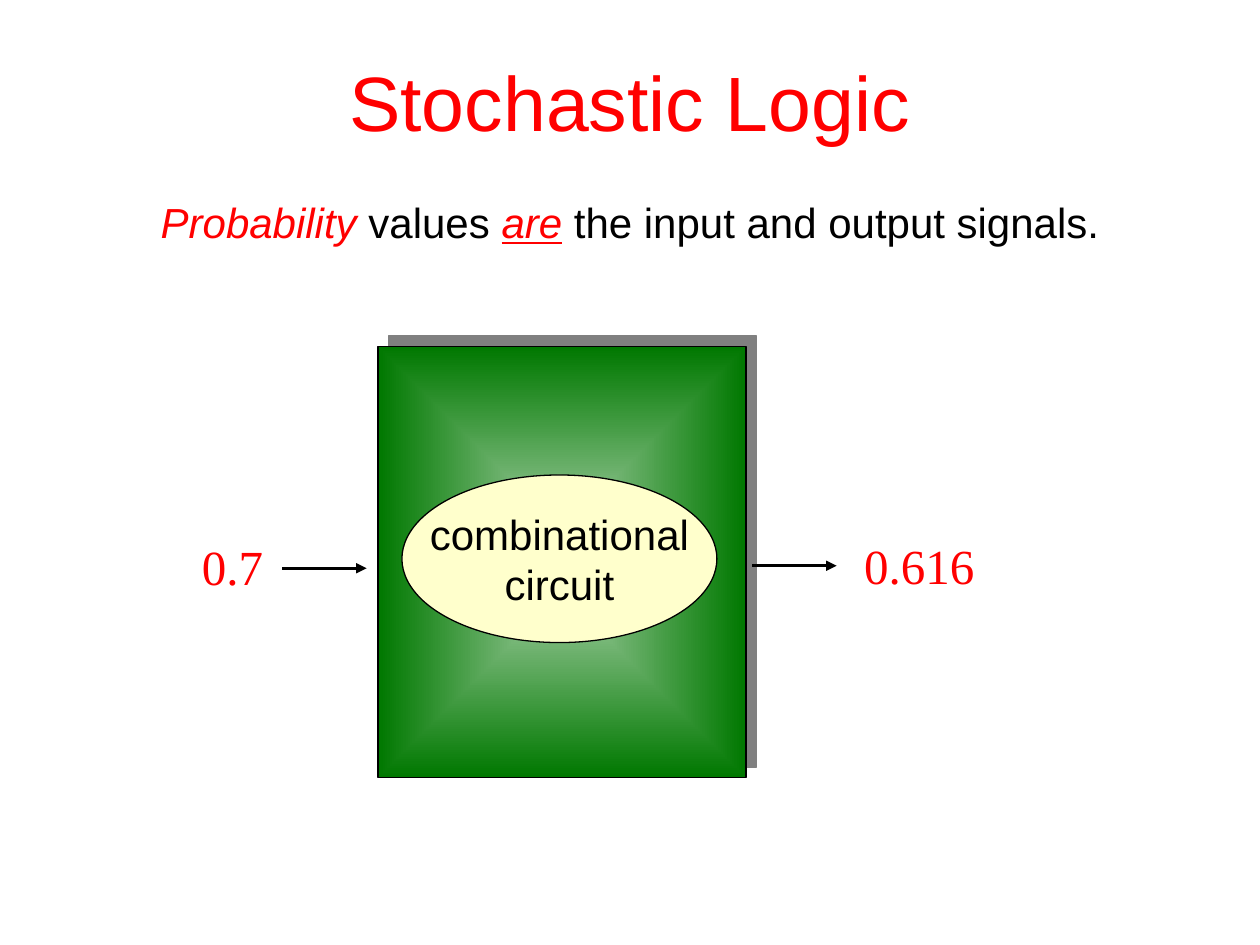
from lxml.etree import SubElement
from pptx import Presentation
from pptx.dml.color import RGBColor
from pptx.enum.shapes import MSO_CONNECTOR, MSO_SHAPE
from pptx.enum.text import MSO_ANCHOR, PP_ALIGN
from pptx.oxml import parse_xml
from pptx.oxml.ns import nsdecls, qn
from pptx.util import Inches, Pt

RED = RGBColor(0xFF, 0x00, 0x00)
BLACK = RGBColor(0x00, 0x00, 0x00)
CREAM = RGBColor(0xFF, 0xFF, 0xCC)
LIGHT_GREEN = RGBColor(0x9F, 0xCC, 0x9F)
GREEN = RGBColor(0x00, 0x78, 0x00)
GRAY = RGBColor(0x80, 0x80, 0x80)


def write_text(shape, runs, size, font="Arial", anchor=MSO_ANCHOR.TOP,
               wrap=True, space_before=0):
    frame = shape.text_frame
    frame.word_wrap = wrap
    frame.vertical_anchor = anchor
    paragraph = frame.paragraphs[0]
    paragraph.alignment = PP_ALIGN.CENTER
    paragraph.space_before = Pt(space_before)
    for text, color, italic, underline in runs:
        for index, line in enumerate(text.split("\n")):
            if index:
                paragraph.add_line_break()
            run = paragraph.add_run()
            run.text = line
            run.font.name = font
            run.font.size = Pt(size)
            run.font.color.rgb = color
            run.font.italic = italic
            run.font.underline = underline


def add_text(slide, left, top, width, height, runs, **text_format):
    box = slide.shapes.add_textbox(
        Inches(left), Inches(top), Inches(width), Inches(height))
    write_text(box, runs, **text_format)


def add_outlined_shape(slide, kind, left, top, width, height):
    shape = slide.shapes.add_shape(
        kind, Inches(left), Inches(top), Inches(width), Inches(height))
    shape.shadow.inherit = False
    shape.line.color.rgb = BLACK
    shape.line.width = Pt(0.75)
    return shape


def add_circuit_box(slide):
    box = add_outlined_shape(slide, MSO_SHAPE.RECTANGLE, 3, 2.75, 2.92, 3.42)
    properties = box.fill._xPr
    gradient = parse_xml(
        f'<a:gradFill {nsdecls("a")} rotWithShape="1"><a:gsLst>'
        f'<a:gs pos="0"><a:srgbClr val="{LIGHT_GREEN}"/></a:gs>'
        f'<a:gs pos="100000"><a:srgbClr val="{GREEN}"/></a:gs></a:gsLst>'
        '<a:path path="rect"><a:fillToRect l="50000" t="50000" r="50000" b="50000"/>'
        '</a:path></a:gradFill>')
    properties.find(qn("a:prstGeom")).addnext(gradient)
    shadow = SubElement(properties.find(qn("a:effectLst")), qn("a:outerShdw"),
                        dist=str(Pt(8.5)), dir="18900000",
                        algn="ctr", rotWithShape="0")
    SubElement(shadow, qn("a:srgbClr"), val=str(GRAY))


def add_circuit_label(slide):
    ellipse = add_outlined_shape(slide, MSO_SHAPE.OVAL, 3.19, 3.77, 2.5, 1.33)
    ellipse.fill.solid()
    ellipse.fill.fore_color.rgb = CREAM
    write_text(ellipse, [("combinational\ncircuit", BLACK, False, False)],
               size=24, anchor=MSO_ANCHOR.MIDDLE, wrap=False)


def add_arrow(slide, left, y, length=0.67):
    arrow = slide.shapes.add_connector(
        MSO_CONNECTOR.STRAIGHT, Inches(left), Inches(y),
        Inches(left + length), Inches(y))
    arrow.line.color.rgb = BLACK
    arrow.line.width = Pt(1.5)
    SubElement(arrow.line._get_or_add_ln(), qn("a:tailEnd"), type="triangle")
    SubElement(arrow._element.spPr, qn("a:effectLst"))


def add_signal(slide, value, left, top, width, arrow_left, arrow_y):
    add_text(slide, left, top, width, 0.57, [(value, RED, False, False)],
             size=28, font="Times New Roman", wrap=False)
    add_arrow(slide, arrow_left, arrow_y)


def main():
    presentation = Presentation()
    presentation.slide_width = Inches(10)
    presentation.slide_height = Inches(7.5)
    slide = presentation.slides.add_slide(presentation.slide_layouts[6])

    add_text(slide, 0.5, 0.17, 9, 1.25,
             [("Stochastic Logic", RED, False, False)],
             size=44, anchor=MSO_ANCHOR.MIDDLE)
    add_text(slide, 0, 1.51, 10, 0.57, [
        ("Probability ", RED, True, False),
        ("values ", BLACK, False, False),
        ("are", RED, True, True),
        (" the input and output signals.", BLACK, False, False),
    ], size=24, space_before=3)
    add_circuit_box(slide)
    add_circuit_label(slide)
    add_signal(slide, "0.7", 1.5, 4.21, 0.69, 2.24, 4.51)
    add_signal(slide, "0.616", 6.75, 4.2, 1.09, 5.97, 4.49)
    presentation.save("out.pptx")


if __name__ == "__main__":
    main()
